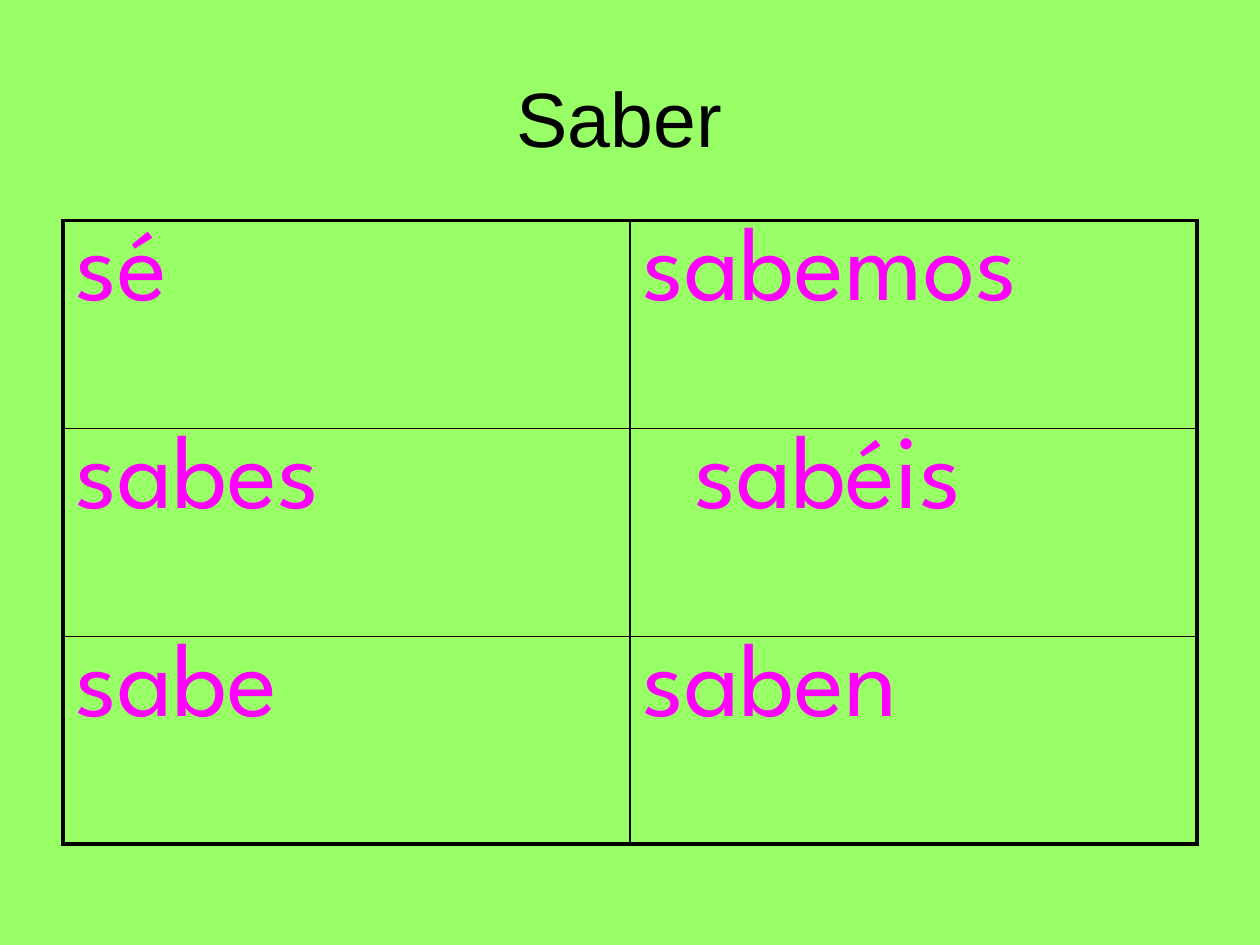
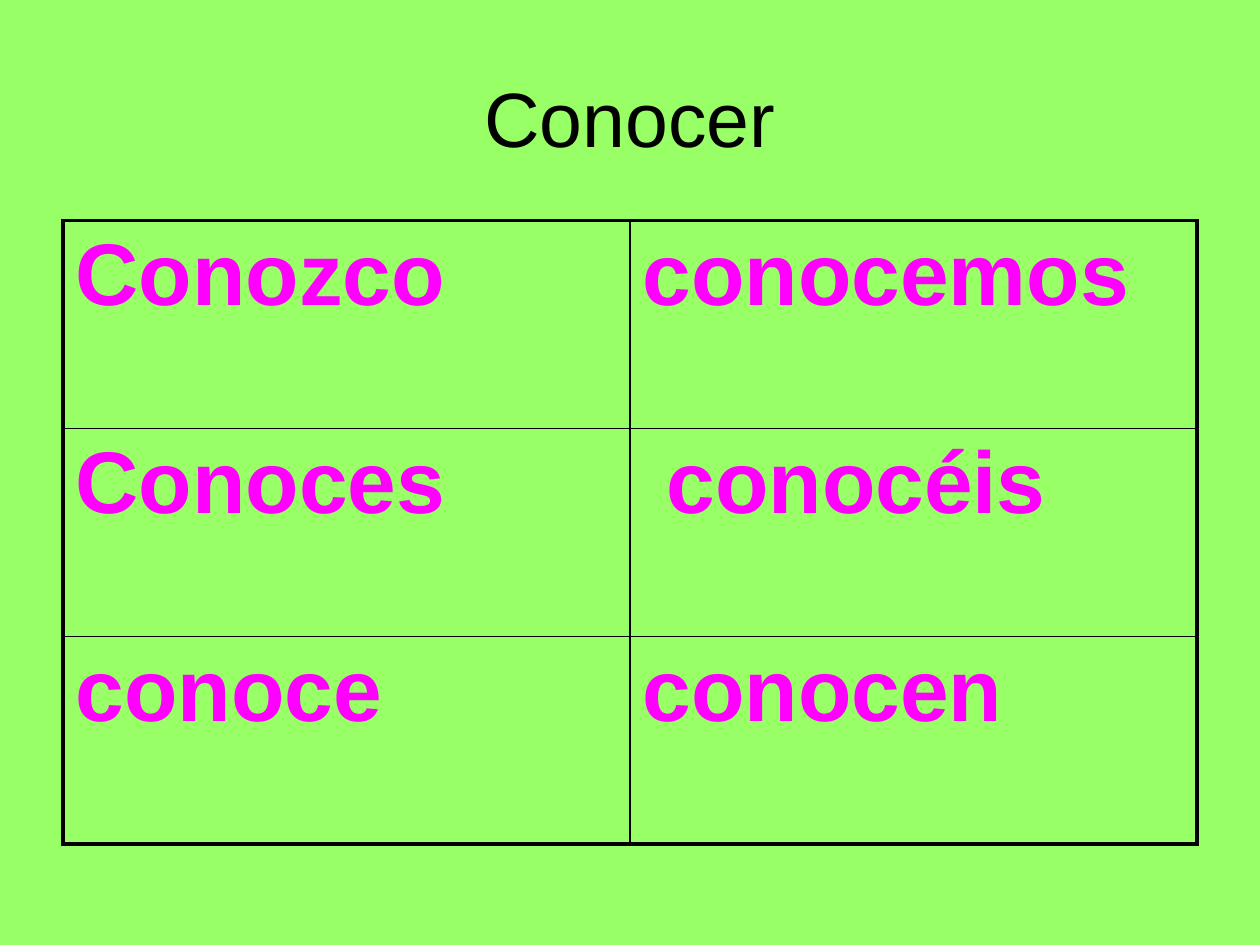
from lxml.etree import SubElement
from pptx import Presentation
from pptx.dml.color import RGBColor
from pptx.enum.text import MSO_ANCHOR, PP_ALIGN
from pptx.oxml.ns import qn
from pptx.util import Emu, Inches, Pt

COLORS = {"background": "99FF66", "title": "000000", "verb": "FF00FF", "rule": "000000"}
OUTER_RULE, INNER_RULE = 2.25, 1

CONJUGATIONS = [
    {
        "title": "Saber ",
        "forms": [["sé", "sabemos"], ["sabes", "sabéis"], ["sabe", "saben"]],
        "style": {"font": "League Spartan", "size": 60},
        "indents": {"sabéis": 0.041},
    },
    {
        "title": "Conocer",
        "forms": [["Conozco", "conocemos"], ["Conoces", "conocéis"], ["conoce", "conocen"]],
        "style": {"font": "Arial", "size": 50, "bold": True},
        "indents": {"conocéis": 0.019},
    },
]


def write_text(frame, text, font="Arial", size=44, color="title", bold=False, align=PP_ALIGN.LEFT):
    """Write one formatted paragraph into a text frame."""
    para = frame.paragraphs[0]
    para.alignment = align
    span = para.add_run()
    span.text = text
    span.font.name = font
    span.font.size = Pt(size)
    span.font.bold = bold
    span.font.color.rgb = RGBColor.from_string(COLORS[color])


class VerbDeck:
    """Hold the shared style and the current page; lengths are shares of the slide."""

    def __init__(self):
        """Open a deck with a coloured master."""
        self.deck = Presentation()
        self.deck.slide_width, self.deck.slide_height = Inches(10), Inches(7.5)
        fill = self.deck.slide_master.background.fill
        fill.solid()
        fill.fore_color.rgb = RGBColor.from_string(COLORS["background"])
        self.page = None

    def across(self, share):
        """Turn a share of the slide width into a length."""
        return Emu(round(self.deck.slide_width * share))

    def down(self, share):
        """Turn a share of the slide height into a length."""
        return Emu(round(self.deck.slide_height * share))

    def area(self, left, top, width, height):
        """Turn four shares into a position and a size."""
        return self.across(left), self.down(top), self.across(width), self.down(height)

    def add_page(self, title):
        """Start a page with a centred title."""
        self.page = self.deck.slides.add_slide(self.deck.slide_layouts[5])
        box = self.page.shapes.title
        box.left, box.top, box.width, box.height = self.area(0.05, 0.04, 0.9, 1 / 6)
        box.text_frame.vertical_anchor = MSO_ANCHOR.MIDDLE
        write_text(box.text_frame, title, align=PP_ALIGN.CENTER)

    def add_rules(self, cell, widths):
        """Draw the left, right, top and bottom rules of a cell."""
        properties = cell._tc.get_or_add_tcPr()
        for side, width in zip("LRTB", widths):
            line = SubElement(properties, qn(f"a:ln{side}"), w=str(Pt(width)))
            SubElement(SubElement(line, qn("a:solidFill")), qn("a:srgbClr"), val=COLORS["rule"])

    def add_forms(self, forms, style, indents):
        """Add the conjugation table with a heavy frame and thin inner rules."""
        last_row, last_column = len(forms) - 1, len(forms[0]) - 1
        frame = self.page.shapes.add_table(
            len(forms), len(forms[0]), *self.area(0.05, 7 / 30, 0.9, 0.66)
        )
        table = frame.table
        table.first_row = table.horz_banding = False
        for row, words in enumerate(forms):
            for column, word in enumerate(words):
                cell = table.cell(row, column)
                edges = (column == 0, column == last_column, row == 0, row == last_row)
                self.add_rules(cell, [OUTER_RULE if edge else INNER_RULE for edge in edges])
                cell.fill.background()
                cell.margin_left = Inches(0.1) + self.across(indents.get(word, 0))
                write_text(cell.text_frame, word, color="verb", **style)

    def save(self):
        """Save the finished deck."""
        self.deck.save("out.pptx")


def main():
    """Build one page for each verb."""
    verbs = VerbDeck()
    for verb in CONJUGATIONS:
        verbs.add_page(verb["title"])
        verbs.add_forms(verb["forms"], verb["style"], verb["indents"])
    verbs.save()


if __name__ == "__main__":
    main()
